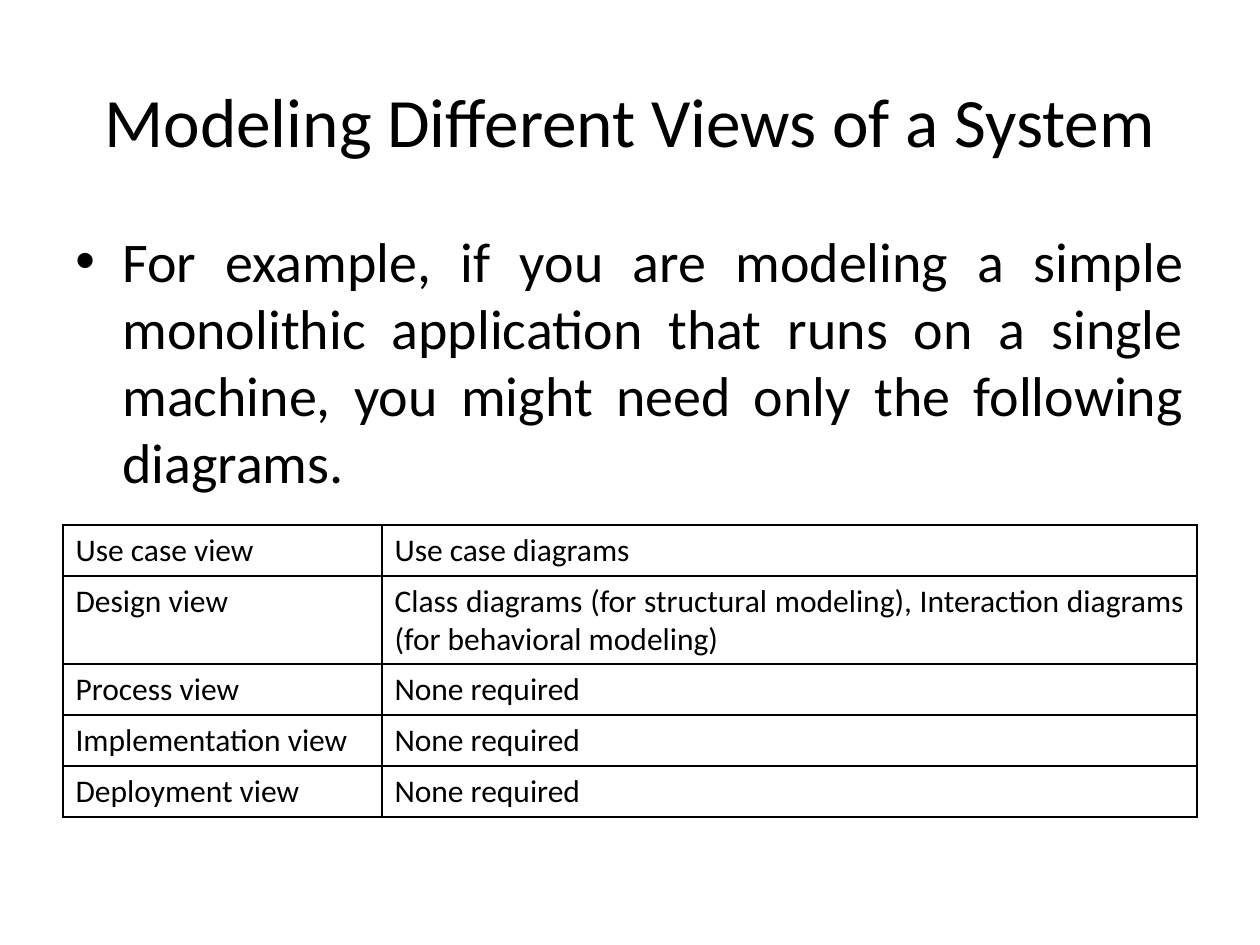
from lxml.etree import SubElement
from pptx import Presentation
from pptx.dml.color import RGBColor
from pptx.enum.text import MSO_ANCHOR as Anchor, PP_ALIGN as Align
from pptx.oxml.ns import qn
from pptx.util import Emu, Pt

PX = 914400 // 126  # EMU in one pixel
COLORS = {"ink": "000000", "paper": "FFFFFF"}
VIEWS = [
    ("Use case view", "Use case diagrams"),
    ("Design view", "Class diagrams (for structural modeling), "
                    "Interaction diagrams (for behavioral modeling)"),
    ("Process view", "None required"),
    ("Implementation view", "None required"),
    ("Deployment view", "None required"),
]


def px(length):
    return Emu(length * PX)


def color(name):
    return RGBColor.from_string(COLORS[name])


def write(frame, text, size=18, align=Align.LEFT, font="Calibri", ink="ink", before=0):
    """Put one formatted paragraph into a text frame and return it."""
    frame.word_wrap = True
    para = frame.paragraphs[0]
    para.alignment = align
    para.space_before = Pt(before)
    span = para.add_run()
    span.text = text
    span.font.name = font
    span.font.size = Pt(size)
    span.font.color.rgb = color(ink)
    return para


class SlideWriter:
    """Holds the line style and the current page."""

    def __init__(self, page, line="ink", line_width=1):
        self.page = page
        self.line = line
        self.line_width = line_width
        page.background.fill.solid()
        page.background.fill.fore_color.rgb = color("paper")

    def text(self, text, left, top, width, height, anchor=Anchor.TOP, **style):
        box = self.page.shapes.add_textbox(px(left), px(top), px(width), px(height))
        box.text_frame.vertical_anchor = anchor
        return write(box.text_frame, text, **style)

    def bullet(self, text, left, top, width, height, indent, **style):
        para = self.text(text, left, top, width, height, **style)
        props = para._p.get_or_add_pPr()
        props.set("marL", str(px(indent)))
        props.set("indent", str(-px(indent)))
        SubElement(props, qn("a:buFont"), typeface="Arial")
        SubElement(props, qn("a:buChar"), char="•")

    def border(self, cell):
        props = cell._tc.get_or_add_tcPr()
        for side in ("lnL", "lnR", "lnT", "lnB"):
            line = SubElement(props, qn(f"a:{side}"), w=str(Pt(self.line_width)))
            fill = SubElement(line, qn("a:solidFill"))
            SubElement(fill, qn("a:srgbClr"), val=COLORS[self.line])

    def table(self, rows, left, top, widths, row_height, aligns):
        table = self.page.shapes.add_table(
            len(rows), len(widths), px(left), px(top),
            px(sum(widths)), px(row_height * len(rows))).table
        table.first_row = table.horz_banding = False
        for column, width in zip(table.columns, widths):
            column.width = px(width)
        for r, row in enumerate(rows):
            for c, text in enumerate(row):
                cell = table.cell(r, c)
                write(cell.text_frame, text, align=aligns[c])
                self.border(cell)
                cell.fill.background()


def main():
    deck = Presentation()
    deck.slide_width, deck.slide_height = px(1260), px(945)
    writer = SlideWriter(deck.slides.add_slide(deck.slide_layouts[6]))

    # Title
    writer.text("Modeling Different Views of a System", 63, 41, 1134, 158,
                anchor=Anchor.MIDDLE, size=39.6, align=Align.CENTER)

    # Example
    writer.bullet("For example, if you are modeling a simple monolithic application "
                  "that runs on a single machine, you might need only the following "
                  "diagrams.", 63, 220, 1134, 624, indent=47,
                  size=32, align=Align.JUSTIFY, before=2.4)

    # Diagrams needed for each view
    writer.table(VIEWS, 63, 525, widths=(319, 815), row_height=51,
                 aligns=(Align.LEFT, Align.JUSTIFY))

    deck.save("out.pptx")


if __name__ == "__main__":
    main()
